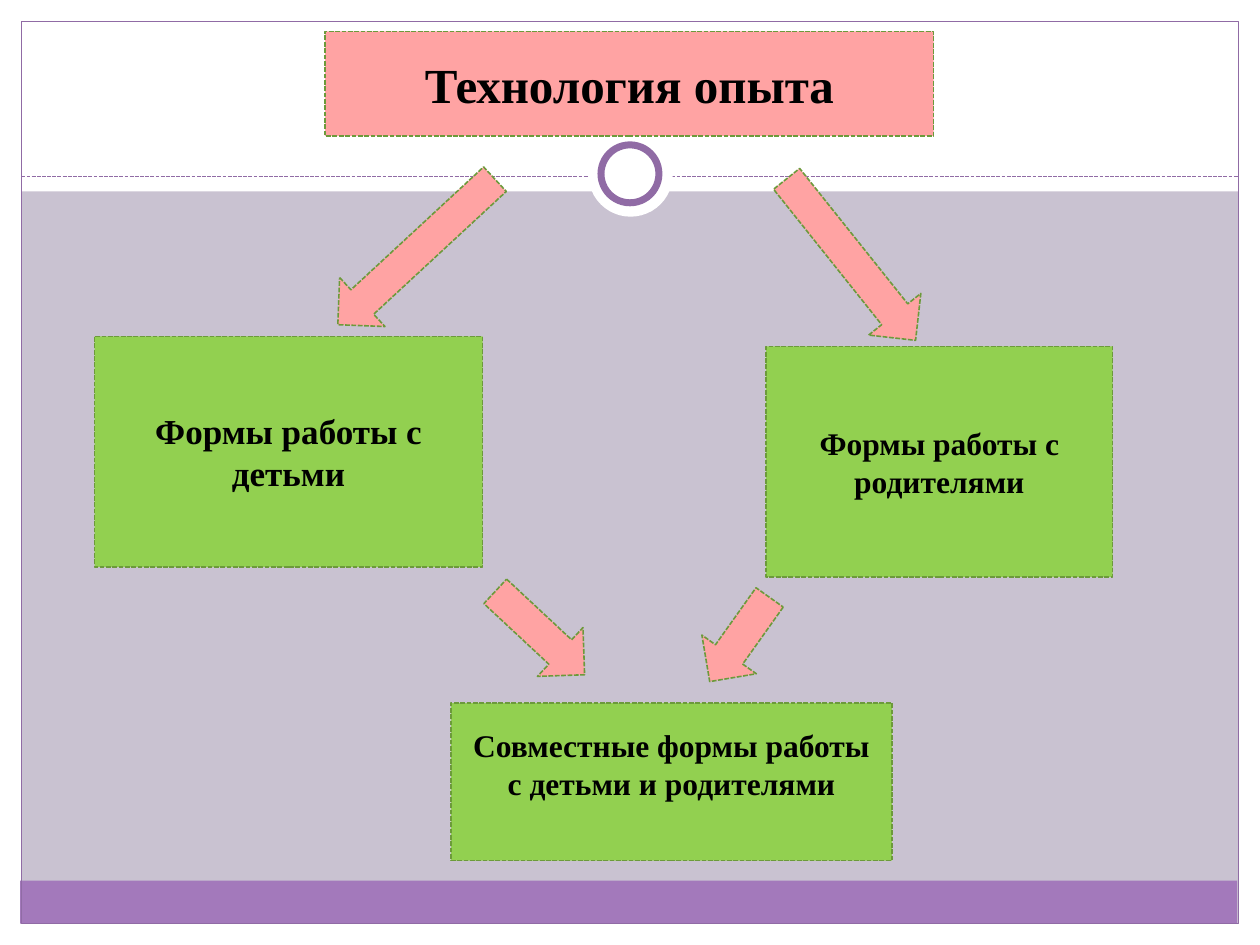
from pptx import Presentation, dml, util as u
from pptx.dml.color import RGBColor
from pptx.enum import dml as line_styles, shapes, text
from pptx.oxml.ns import qn
from lxml import etree

WHITE, PURPLE, VIOLET, LILAC = "FFFFFF", "906BA5", "A379BB", "C9C2D1"
PINK, GREEN, OLIVE, BLACK = "FFA3A3", "92D050", "6C9A3B", "000000"
KIND = shapes.MSO_SHAPE


def color(value):
    return RGBColor.from_string(value)


class Diagram:
    """Draws the elements of a flow diagram on one slide in a shared style."""

    font = "Times New Roman"

    def __init__(self, slide):
        self.slide = slide
        self.slide.background.fill.solid()
        self.slide.background.fill.fore_color.rgb = color(LILAC)

    def outline(self, line, value, width, dashed=False):
        line.color.rgb = color(value)
        line.width = u.Pt(width)
        if dashed:
            line.dash_style = line_styles.MSO_LINE.SQUARE_DOT

    def shape(self, kind, place, fill=None, line=None, width=0.75, dashed=False):
        shape = self.slide.shapes.add_shape(kind, *map(u.Inches, place))
        shape.shadow.inherit = False
        if fill:
            shape.fill.solid()
            shape.fill.fore_color.rgb = color(fill)
        else:
            shape.fill.background()
        if line:
            self.outline(shape.line, line, width, dashed)
        else:
            shape.line.fill.background()
        return shape

    def rule(self, left, right, top):
        ends = map(u.Inches, (left, top, right, top))
        connector = self.slide.shapes.add_connector(shapes.MSO_CONNECTOR.STRAIGHT, *ends)
        self.outline(connector.line, PURPLE, 0.75, dashed=True)
        etree.SubElement(connector._element.spPr, qn("a:effectLst"))

    def box(self, place, fill, words, size, bottom=0.05):
        frame = self.shape(KIND.RECTANGLE, place, fill, OLIVE, 0.9, True).text_frame
        frame.text = words
        frame.word_wrap = True
        frame.margin_bottom = u.Inches(bottom)
        frame.vertical_anchor = text.MSO_ANCHOR.MIDDLE
        paragraph = frame.paragraphs[0]
        paragraph.alignment = text.PP_ALIGN.CENTER
        font = paragraph.runs[0].font
        font.name, font.size, font.bold = self.font, u.Pt(size), True
        font.color.rgb = color(BLACK)

    def arrow(self, kind, place, angle):
        self.shape(kind, place, PINK, OLIVE, 0.9, True).rotation = angle


def main():
    presentation = Presentation()
    presentation.slide_width, presentation.slide_height = u.Inches(10), u.Inches(7.5)
    diagram = Diagram(presentation.slides.add_slide(presentation.slide_layouts[6]))

    for place in ((0, 7.33, 10, 0.17), (0, 0, 10, 1.52),
                  (0, 0, 0.17, 7.5), (9.83, 0, 0.17, 7.5)):
        diagram.shape(KIND.RECTANGLE, place, WHITE)
    diagram.shape(KIND.RECTANGLE, (0.16, 6.99, 9.66, 0.34), VIOLET)
    diagram.shape(KIND.RECTANGLE, (0.17, 0.17, 9.66, 7.16), line=PURPLE)
    diagram.rule(0.17, 9.83, 1.4)
    diagram.shape(KIND.OVAL, (4.67, 1.05, 0.67, 0.67), WHITE)
    diagram.shape(KIND.OVAL, (4.77, 1.15, 0.46, 0.46), WHITE, PURPLE, 4)

    diagram.box((2.58, 0.25, 4.83, 0.83), PINK, "Технология опыта", 28)
    diagram.arrow(KIND.DOWN_ARROW, (3.04, 1.15, 0.53, 1.7), 47.2)
    diagram.arrow(KIND.DOWN_ARROW, (6.49, 1.24, 0.53, 1.64), 321.4)
    diagram.box((0.75, 2.67, 3.08, 1.83), GREEN, "Формы работы с детьми", 20)
    diagram.box((6.08, 2.75, 2.75, 1.83), GREEN, "Формы работы с родителями", 18)
    diagram.box((3.58, 5.58, 3.5, 1.25), GREEN,
                "Совместные формы работы с детьми и родителями", 18, bottom=0.33)
    diagram.arrow(KIND.RIGHT_ARROW, (3.8, 4.76, 0.97, 0.53), 43)
    diagram.arrow(KIND.RIGHT_ARROW, (5.46, 4.81, 0.82, 0.53), 125.4)

    presentation.save("out.pptx")


if __name__ == "__main__":
    main()
